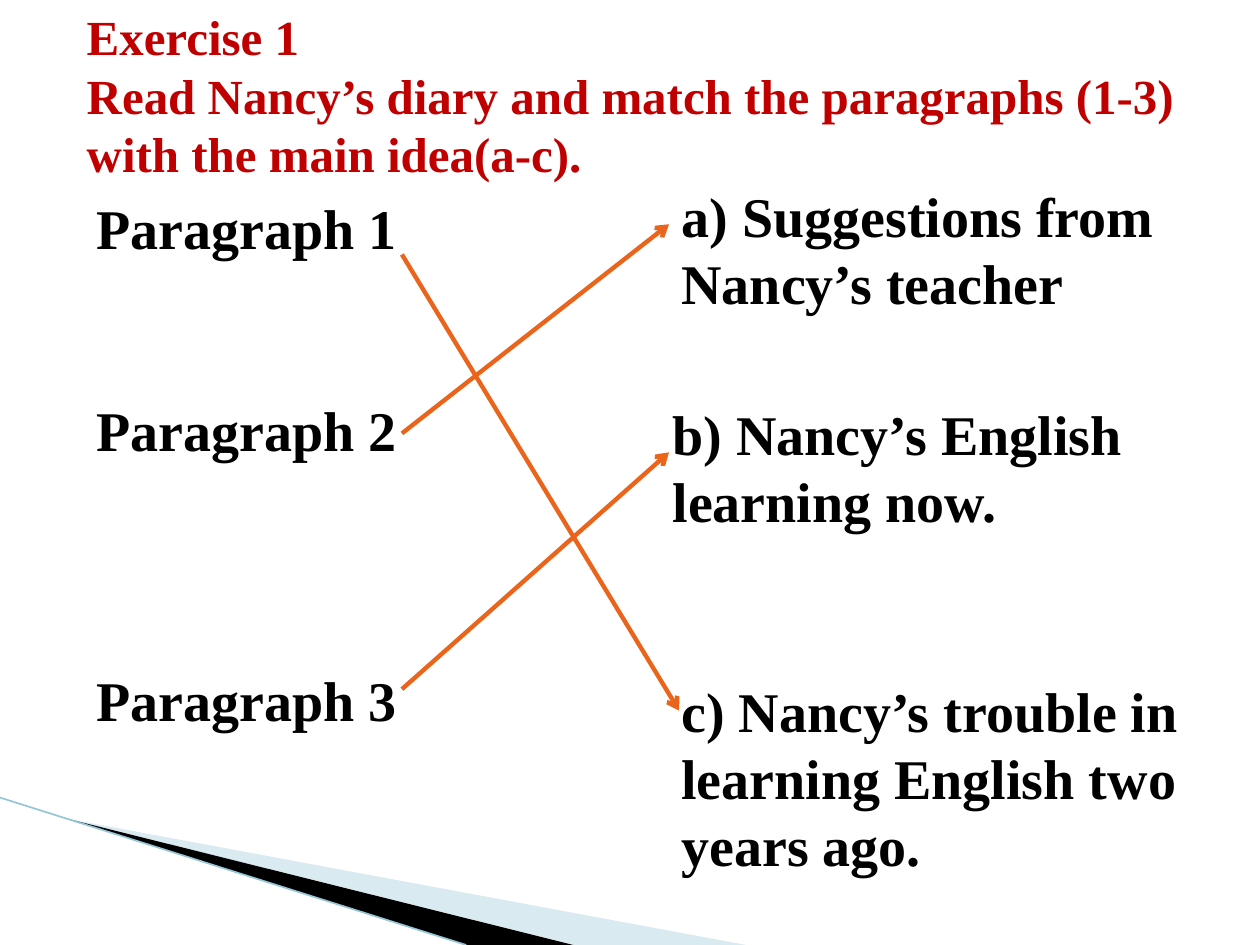
from lxml.etree import SubElement
from pptx import Presentation
from pptx.dml.color import RGBColor
from pptx.enum.shapes import MSO_CONNECTOR
from pptx.enum.text import MSO_ANCHOR
from pptx.oxml.ns import qn
from pptx.util import Inches, Pt

COLUMN = ROW = Inches(0.1)
COLUMNS, ROWS = 100, 75
FONT = "Times New Roman"
RED, BLACK, ORANGE, PALE_BLUE = "C00000", "000000", "EB641B", "A0CBDC"


def color(code):
    return RGBColor.from_string(code)


def grid(column, row):
    return round(column * COLUMN), round(row * ROW)


def add_text(page, lines, area, size=32, ink=BLACK, anchor=MSO_ANCHOR.TOP, gaps=()):
    left, top, width, height = area
    box = page.shapes.add_textbox(*grid(left, top), *grid(width, height))
    frame = box.text_frame
    frame.word_wrap = True
    frame.vertical_anchor = anchor
    for index, line in enumerate(lines):
        para = frame.add_paragraph() if index else frame.paragraphs[0]
        if index and gaps:
            para.space_before = Pt(gaps[index - 1])
        span = para.add_run()
        span.text = line
        span.font.name = FONT
        span.font.size = Pt(size)
        span.font.bold = True
        span.font.color.rgb = color(ink)


def add_line(page, start, end, ink, weight, arrow=False):
    line = page.shapes.add_connector(MSO_CONNECTOR.STRAIGHT, *grid(*start), *grid(*end))
    line.line.color.rgb = color(ink)
    line.line.width = Pt(weight)
    if arrow:
        SubElement(line.line._get_or_add_ln(), qn("a:tailEnd"), type="arrow")
    SubElement(line._element.spPr, qn("a:effectLst"))


def add_wedge(page, points, fill, opacity=100):
    first, *others = [grid(*point) for point in points]
    builder = page.shapes.build_freeform(*first)
    builder.add_line_segments(others, close=True)
    wedge = builder.convert_to_shape()
    wedge.shadow.inherit = False
    wedge.line.fill.background()
    wedge.fill.solid()
    wedge.fill.fore_color.rgb = color(fill)
    if opacity < 100:
        tint = wedge._element.spPr.find(qn("a:solidFill"))[0]
        SubElement(tint, qn("a:alpha"), val=str(opacity * 1000))


def add_corner(page, area):
    left, top, width, height = area
    bottom = top + height
    tip = (left + 5.4, top + 1.7)
    add_wedge(page, [tip, (left + width, bottom), (left + 45.6, bottom)], PALE_BLUE, 40)
    add_wedge(page, [tip, (left + 45.5, bottom), (left + 37, bottom)], BLACK)
    add_line(page, (left, top), (left + 37, bottom), "97C5D8", 0.95)


def add_heading(page, area):
    lines = ["Exercise 1",
             "Read Nancy’s diary and match the paragraphs (1-3) with the main idea(a-c)."]
    add_text(page, lines, area, size=28, ink=RED)


def add_paragraph_names(page, area):
    names = [f"Paragraph {number}" for number in (1, 2, 3)]
    add_text(page, names, area, anchor=MSO_ANCHOR.MIDDLE, gaps=(77, 115.5))


def add_ideas(page, area):
    left, top, width, height = area
    ideas = [("a) Suggestions from Nancy’s teacher", 0, 0, 11.8),
             ("b) Nancy’s English learning now.", -0.7, 17.3, 11.8),
             ("c) Nancy’s trouble in learning English two years ago.", 0, 39.3, 17.2)]
    for idea, shift, drop, rows in ideas:
        add_text(page, [idea], (left + shift, top + drop, width - shift, rows))


def add_matches(page, area):
    left, top, width, height = area
    matches = [(2.4, width, height), (16.6, width - 0.8, 0), (36.9, width - 0.8, 18.1)]
    for start, reach, end in matches:
        add_line(page, (left, top + start), (left + reach, top + end), ORANGE, 2.5, arrow=True)


def main():
    deck = Presentation()
    deck.slide_width, deck.slide_height = grid(COLUMNS, ROWS)
    page = deck.slides.add_slide(deck.slide_layouts[6])
    add_corner(page, (0, 63.3, 59.2, 11.7))
    add_heading(page, (5.9, 0, 91.4, 15.1))
    add_paragraph_names(page, (6.7, 14.7, 34.4, 44.1))
    add_ideas(page, (53.1, 13.9, 46.9, 56.5))
    add_matches(page, (31.9, 17.8, 22, 38.6))
    deck.save("out.pptx")


if __name__ == "__main__":
    main()
